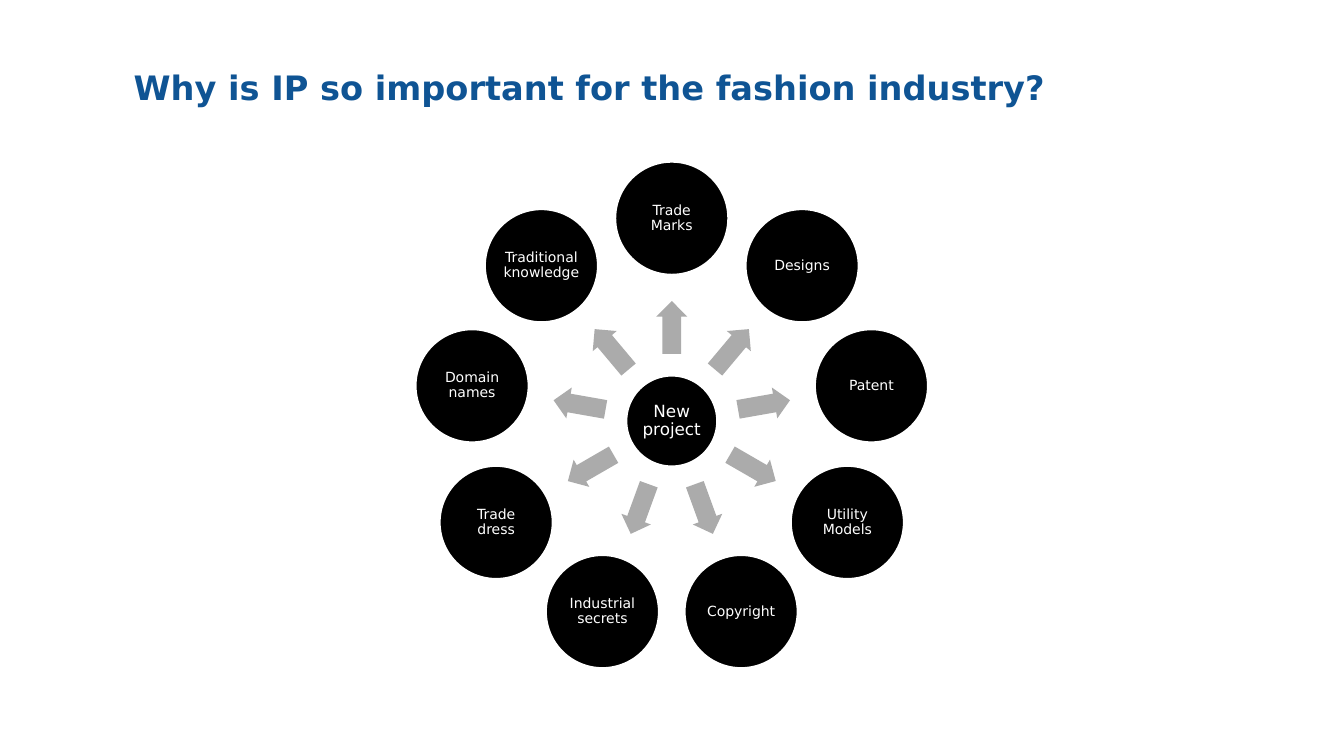
from dataclasses import dataclass
from math import cos, radians, sin

from pptx import Presentation
from pptx.dml.color import RGBColor
from pptx.enum.shapes import MSO_SHAPE
from pptx.enum.text import MSO_ANCHOR, PP_ALIGN
from pptx.shapes.autoshape import Shape
from pptx.slide import Slide
from pptx.util import Cm, Pt

BLUE = RGBColor(0x0F, 0x54, 0x94)
BLACK = RGBColor(0x00, 0x00, 0x00)
WHITE = RGBColor(0xFF, 0xFF, 0xFF)
GREY = RGBColor(0xAB, 0xAB, 0xAB)
FONT = "DejaVu Sans"

# Lengths in centimetres
CENTRE_X, CENTRE_Y = 16.93, 10.61
RING_RADIUS, ARROW_RADIUS = 5.11, 2.36
ARROW_LENGTH, ARROW_HEIGHT = 1.33, 0.79


@dataclass(frozen=True)
class Bubble:
    """Circle style: diameter and text inset in cm, text size in points."""
    diameter: float
    inset: float
    size: int


HUB = Bubble(2.31, 0.04, 12)
TOPIC = Bubble(2.87, 0.03, 10)

TOPICS = [
    "Trade Marks", "Designs", "Patent", "Utility Models", "Copyright",
    "Industrial secrets", "Trade dress", "Domain names", "Traditional knowledge",
]


def add_polar_shape(s: Slide, kind: MSO_SHAPE, angle: float, radius: float,
                    width: float, height: float, fill: RGBColor) -> Shape:
    """Centre a shape at an angle (clockwise from the right) around the hub."""
    x = CENTRE_X + radius * cos(radians(angle))
    y = CENTRE_Y + radius * sin(radians(angle))
    sp = s.shapes.add_shape(kind, Cm(x - width / 2), Cm(y - height / 2),
                            Cm(width), Cm(height))
    sp.shadow.inherit = False
    sp.fill.solid()
    sp.fill.fore_color.rgb = fill
    return sp


def add_bubble(s: Slide, text: str, style: Bubble, angle: float, radius: float) -> None:
    sp = add_polar_shape(s, MSO_SHAPE.OVAL, angle, radius,
                         style.diameter, style.diameter, BLACK)
    sp.line.color.rgb = WHITE
    sp.line.width = Pt(2)
    tf = sp.text_frame
    tf.word_wrap = True
    tf.vertical_anchor = MSO_ANCHOR.MIDDLE
    tf.margin_left = tf.margin_right = Cm(style.inset)
    tf.margin_top = tf.margin_bottom = Cm(style.inset)
    p = tf.paragraphs[0]
    p.text = text
    p.alignment = PP_ALIGN.CENTER
    p.line_spacing = 0.9
    p.font.name = FONT
    p.font.size = Pt(style.size)
    p.font.color.rgb = WHITE


def add_arrow(s: Slide, angle: float) -> None:
    sp = add_polar_shape(s, MSO_SHAPE.RIGHT_ARROW, angle, ARROW_RADIUS,
                         ARROW_LENGTH, ARROW_HEIGHT, GREY)
    sp.rotation = angle % 360
    sp.adjustments[0] = 0.6
    sp.adjustments[1] = 0.5
    sp.line.fill.background()


def add_title(s: Slide, text: str) -> None:
    tf = s.shapes.add_textbox(Cm(3.12), Cm(0.91), Cm(27.66), Cm(2.59)).text_frame
    tf.word_wrap = True
    tf.vertical_anchor = MSO_ANCHOR.MIDDLE
    p = tf.paragraphs[0]
    p.text = text
    p.font.name = FONT
    p.font.size = Pt(24)
    p.font.bold = True
    p.font.color.rgb = BLUE


def main() -> None:
    prs = Presentation()
    prs.slide_width, prs.slide_height = Cm(33.87), Cm(19.05)
    s = prs.slides.add_slide(prs.slide_layouts[6])
    add_title(s, "Why is IP so important for the fashion industry?")
    add_bubble(s, "New project", HUB, 0, 0)
    for i, topic in enumerate(TOPICS):
        angle = -90 + i * 360 / len(TOPICS)
        add_arrow(s, angle)
        add_bubble(s, topic, TOPIC, angle, RING_RADIUS)
    prs.save("out.pptx")


if __name__ == "__main__":
    main()
